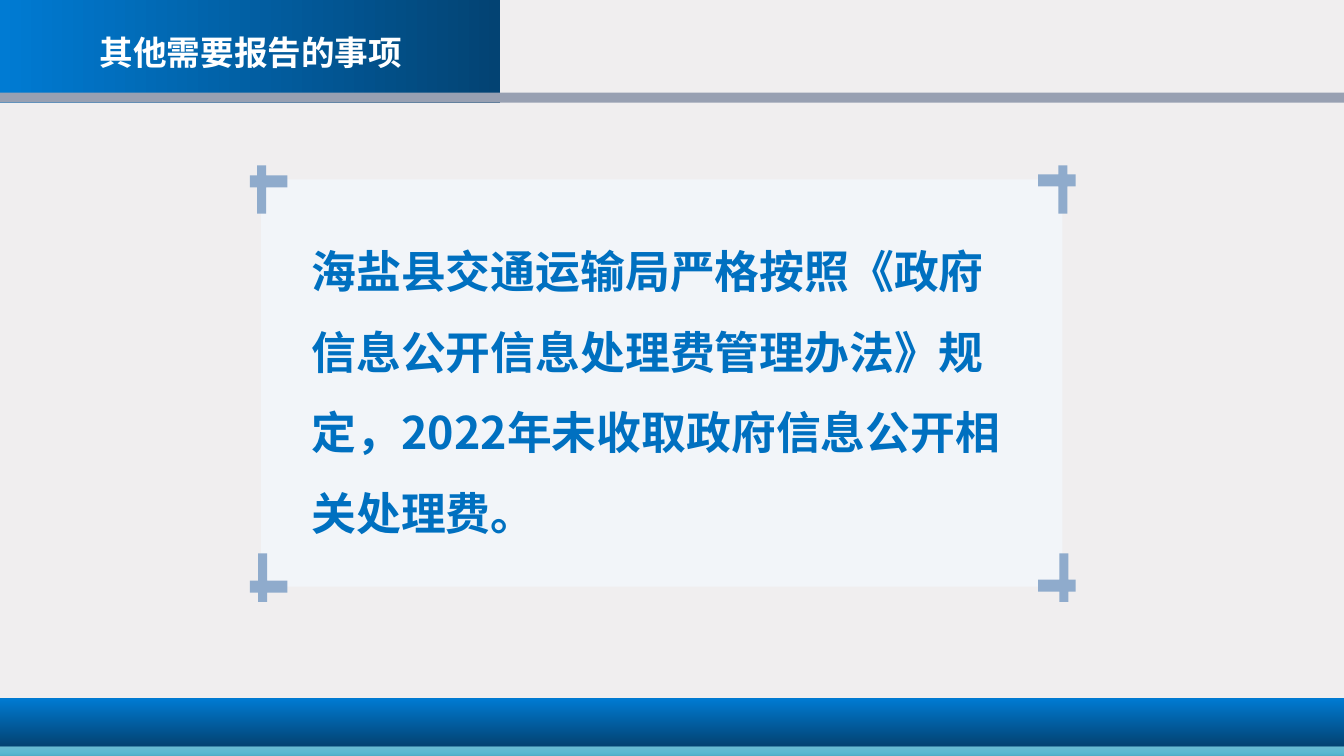
from dataclasses import dataclass

from lxml import etree
from pptx import Presentation
from pptx import util as u
from pptx.dml.color import RGBColor
from pptx.enum import shapes, text
from pptx.oxml.ns import qn


@dataclass(frozen=True)
class Theme:
    font: str = "Noto Sans CJK SC"
    title_size: int = 24
    body_size: int = 32
    background: str = "F0EEEF"
    rule: str = "98A0B2"
    panel: str = "F2F5F9"
    mark: str = "8FABCC"
    title: str = "FFFFFF"
    body: str = "0070C0"
    header: tuple = ((0, "007BD3"), (100, "034373"))
    footer: tuple = ((0, "007BD3"), (80, "034373"), (82, "68BBD2"),
                     (91, "5BB8D1"), (100, "4AA7C0"))


THEME = Theme()
WIDTH, HEIGHT = u.Inches(13.333), u.Inches(7.5)


# Lengths are percentages of the slide's width and height
def across(share):
    return round(WIDTH * share / 100)


def down(share):
    return round(HEIGHT * share / 100)


def box(left, top, width, height):
    return across(left), down(top), across(width), down(height)


# Fills
def paint(sp, color):
    sp.shadow.inherit = False
    sp.line.fill.background()
    sp.fill.solid()
    sp.fill.fore_color.rgb = RGBColor.from_string(color)


def paint_gradient(sp, stops, angle):
    sp.fill.gradient()
    sp.fill.gradient_angle = 0
    grad = sp.fill._xPr.find(qn("a:gradFill"))
    stop_list = grad.find(qn("a:gsLst"))
    for stop in list(stop_list):
        stop_list.remove(stop)
    for position, color in stops:
        stop = etree.SubElement(stop_list, qn("a:gs"), pos=str(position * 1000))
        etree.SubElement(stop, qn("a:srgbClr"), val=color)
    grad.find(qn("a:lin")).set("ang", str(angle * 60000))


# Elements
def add_band(s, area, color):
    sp = s.shapes.add_shape(shapes.MSO_SHAPE.RECTANGLE, *area)
    paint(sp, color)
    return sp


def add_corner_mark(s, x, y, toward_x, toward_y, stem, bar):
    """Draw a cross with two long arms pointing into the panel."""
    xs = [across(x + toward_x * d) for d in (0, stem, stem + 0.68, 2.78)]
    ys = [down(y + toward_y * d) for d in (0, bar, bar + 1.6, 6.4)]
    cells = ((1, 0), (2, 0), (2, 1), (3, 1), (3, 2), (2, 2),
             (2, 3), (1, 3), (1, 2), (0, 2), (0, 1), (1, 1))
    points = [(xs[i], ys[j]) for i, j in cells]
    outline = s.shapes.build_freeform(*points[0])
    outline.add_line_segments(points[1:], close=True)
    paint(outline.convert_to_shape(), THEME.mark)


def fill_placeholder(s, sp, area, words, size, color, spacing):
    sp.left, sp.top, sp.width, sp.height = area
    s.shapes._spTree.append(sp._element)  # bring to front
    tf = sp.text_frame
    tf.word_wrap = True
    tf.auto_size = text.MSO_AUTO_SIZE.NONE
    tf.vertical_anchor = text.MSO_ANCHOR.TOP
    p = tf.paragraphs[0]
    p.alignment = text.PP_ALIGN.LEFT
    p.line_spacing = spacing
    p.space_before = u.Pt(0)
    pPr = p._p.get_or_add_pPr()
    pPr.set("marL", "0")
    pPr.set("indent", "0")
    etree.SubElement(pPr, qn("a:buNone"))
    r = p.add_run()
    r.text = words
    r.font.size = u.Pt(size)
    r.font.bold = True
    r.font.color.rgb = RGBColor.from_string(color)
    r.font.name = THEME.font
    etree.SubElement(r._r.get_or_add_rPr(), qn("a:ea"), typeface=THEME.font)


def main():
    prs = Presentation()
    prs.slide_width, prs.slide_height = WIDTH, HEIGHT
    s = prs.slides.add_slide(prs.slide_layouts[1])
    s.background.fill.solid()
    s.background.fill.fore_color.rgb = RGBColor.from_string(THEME.background)

    # Header
    header = add_band(s, box(0, 0, 37.2, 13.6), THEME.rule)
    paint_gradient(header, THEME.header, 0)
    add_band(s, box(0, 12.27, 100, 1.33), THEME.rule)
    fill_placeholder(s, s.shapes.title, box(6.67, 3.6, 78.7, 6.67),
                     "其他需要报告的事项", THEME.title_size, THEME.title, 1.0)

    # Panel with corner marks
    add_band(s, box(19.43, 23.73, 59.63, 53.87), THEME.panel)
    left, right, top, bottom = 18.6, 80.03, 21.87, 79.6
    add_corner_mark(s, left, top, 1, 1, 0.53, 1.33)
    add_corner_mark(s, right, top, -1, 1, 0.6, 1.2)
    add_corner_mark(s, right, bottom, -1, -1, 0.53, 1.33)
    add_corner_mark(s, left, bottom, 1, -1, 0.6, 1.2)
    fill_placeholder(s, s.placeholders[1], box(22.43, 28, 53.7, 43.2),
                     "海盐县交通运输局严格按照《政府信息公开信息处理费管理办法》规定，"
                     "2022年未收取政府信息公开相关处理费。",
                     THEME.body_size, THEME.body, 1.5)

    # Footer
    footer = add_band(s, box(0, 92.27, 100, 8), THEME.rule)
    paint_gradient(footer, THEME.footer, 90)

    prs.save("out.pptx")


if __name__ == "__main__":
    main()
